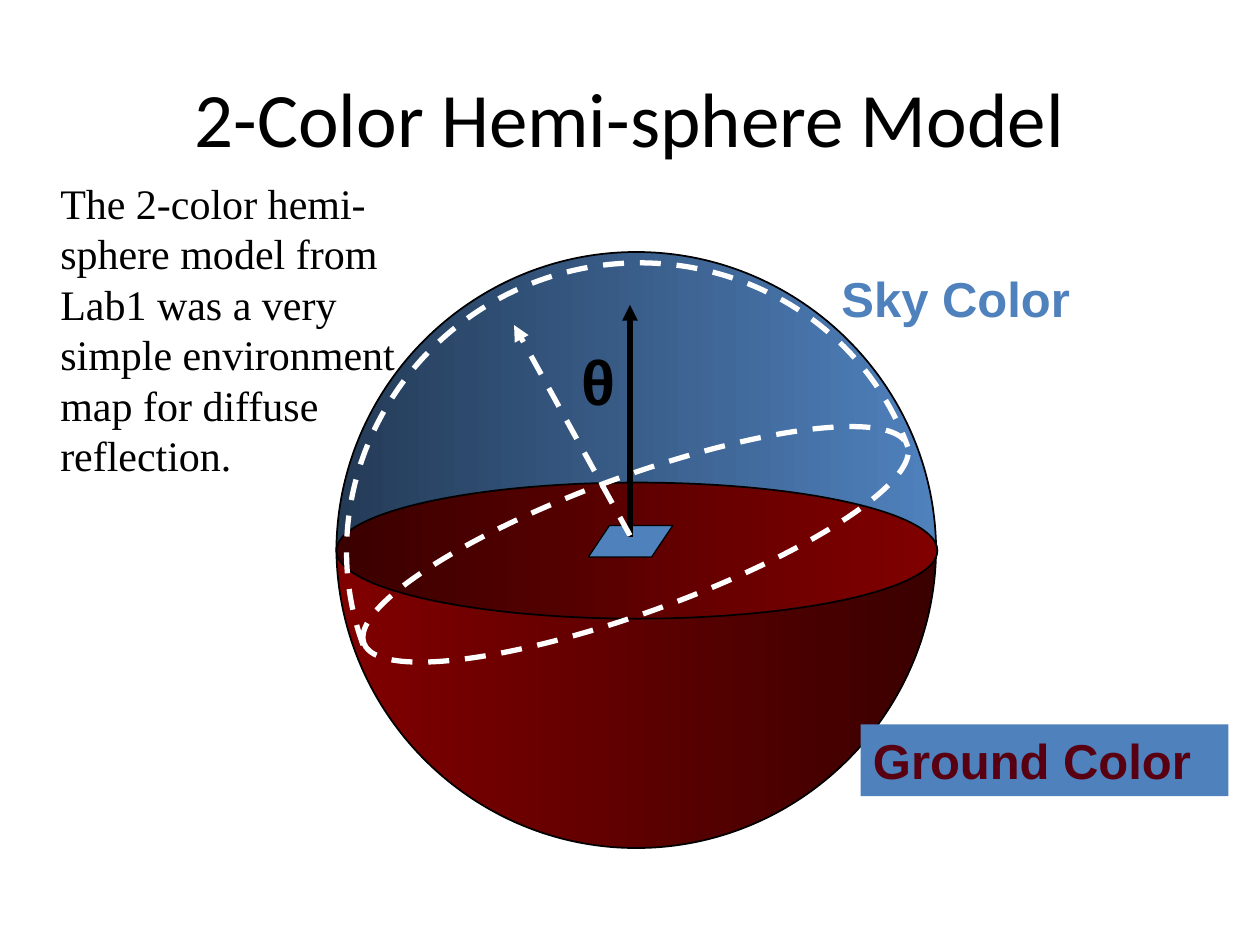
"""Build the slide on the two-colour hemisphere model."""
import pptx
import pptx.dml.color
import pptx.enum.dml
import pptx.enum.shapes
import pptx.enum.text
import pptx.oxml.ns
import pptx.util
from lxml import etree

Inches, Pt = pptx.util.Inches, pptx.util.Pt
KINDS = pptx.enum.shapes.MSO_SHAPE
ALIGN = pptx.enum.text.PP_ALIGN
ANCHOR = pptx.enum.text.MSO_ANCHOR
FIT = pptx.enum.text.MSO_AUTO_SIZE.SHAPE_TO_FIT_TEXT
DASH = pptx.enum.dml.MSO_LINE.DASH
qn = pptx.oxml.ns.qn

SKY, GROUND, BLACK, WHITE = "4F81BD", "800000", "000000", "FFFFFF"
SHADE = "46275"
BEND = 0.55
TITLE = ("2-Color Hemi-sphere Model", (0.5, 0.3, 9, 1.25))
NOTE = ("The 2-color hemi-sphere model from Lab1 was a very simple "
        "environment map for diffuse reflection.")
HEAD = dict(size=Pt(44), name="Calibri", bold=False)
LABEL = dict(size=Pt(28), name="Arial", bold=True)
THETA = dict(size=Pt(36), name="Arial", bold=True)
BODY = dict(size=Pt(24), name="Times New Roman", bold=False)
TEXTS = [
    ("θ", (4.5, 2.67, 0.5, 0.7), THETA, BLACK, ALIGN.CENTER),
    (NOTE, (0.38, 1.36, 2.99, 2.52), BODY, BLACK, ALIGN.LEFT),
]
ARROWS = [
    ((5, 4.26), (5, 2.42), BLACK, None),
    ((5, 4.25), (4.08, 2.58), WHITE, DASH),
]


def rgb(code):
    return pptx.dml.color.RGBColor.from_string(code)


def node(parent, tag, **attrs):
    return etree.SubElement(parent, qn(tag), attrs)


def ink(line, color, width, dash=None):
    line.color.rgb = rgb(color)
    for key, val in dict(width=Pt(width), dash_style=dash).items():
        setattr(line, key, val)


def blend(shape, color, dark):
    """Fill left to right, with the stop numbered dark shaded."""
    shape.fill.gradient()
    shape.fill.gradient_angle = 0
    for stop, place in zip(shape.fill.gradient_stops, (0, 1)):
        stop.color.rgb = rgb(color)
        stop.position = place
    tint = shape._element.spPr.findall(".//" + qn("a:gs"))[dark][0]
    node(tint, "a:gamma")
    node(tint, "a:shade", val=SHADE)
    node(tint, "a:invGamma")


def write(shape, text, fmt, color, align):
    frame = shape.text_frame
    frame.text = text
    para = frame.paragraphs[0]
    para.alignment = align
    font = para.runs[0].font
    for key, val in fmt.items():
        setattr(font, key, val)
    font.color.rgb = rgb(color)
    return frame


def label(shape, text, fmt, color, align):
    frame = write(shape, text, fmt, color, align)
    for key, val in dict(word_wrap=True, auto_size=FIT,
                         vertical_anchor=ANCHOR.TOP).items():
        setattr(frame, key, val)


def put(shapes, kind, box):
    shape = shapes.add_shape(kind, *map(Inches, box))
    shape.shadow.inherit = False
    return shape


def half(shapes, mid, radii, side):
    """Draw half an ellipse, above (-1) or below (1) its middle, as two curves."""
    units = [(-1, 0), (-1, BEND), (-BEND, 1), (0, 1), (BEND, 1), (1, BEND), (1, 0)]
    spots = [(Inches(mid[0] + radii[0] * across), Inches(mid[1] + side * radii[1] * up))
             for across, up in units]
    pen = shapes.build_freeform(*spots[0])
    pen.add_line_segments(spots[1:], close=False)
    shape = pen.convert_to_shape()
    shape.shadow.inherit = False
    track = shape._element.spPr.find(".//" + qn("a:path"))
    steps = track.findall(qn("a:lnTo"))
    for first in (0, 3):
        curve = node(track, "a:cubicBezTo")
        for step in steps[first:first + 3]:
            curve.append(step[0])
            track.remove(step)
    return shape


def arrow(shapes, start, end, color, dash):
    link = shapes.add_connector(pptx.enum.shapes.MSO_CONNECTOR.STRAIGHT,
                                *map(Inches, start + end))
    ink(link.line, color, 3, dash)
    node(link.line._get_or_add_ln(), "a:tailEnd", type="triangle")
    node(link._element.spPr, "a:effectLst")


def globe(shapes):
    sky = half(shapes, (5.05, 4.38), (2.38, 2.38), -1)
    ground = half(shapes, (5.05, 4.34), (2.38, 2.39), 1)
    disc = put(shapes, KINDS.OVAL, (2.67, 3.83, 4.77, 1.08))
    for shape, color, dark in ((sky, SKY, 0), (ground, GROUND, 1), (disc, GROUND, 0)):
        blend(shape, color, dark)
        ink(shape.line, BLACK, 1)
    ring = put(shapes, KINDS.OVAL, (2.75, 3.78, 4.59, 1.08))
    dome = half(shapes, (4.66, 4.4), (2.3, 2.24), -1)
    for shape in (ring, dome):
        shape.rotation = 340
        shape.fill.background()
        ink(shape.line, WHITE, 3, DASH)


def main():
    deck = pptx.Presentation()
    deck.slide_width, deck.slide_height = Inches(10), Inches(7.5)
    shapes = deck.slides.add_slide(deck.slide_layouts[5]).shapes
    title, (text, box) = shapes.title, TITLE
    for key, val in zip(("left", "top", "width", "height"), box):
        setattr(title, key, Inches(val))
    write(title, text, HEAD, BLACK, ALIGN.CENTER).vertical_anchor = ANCHOR.MIDDLE

    globe(shapes)
    name = shapes.add_textbox(*map(Inches, (6.58, 2.08, 2.92, 0.57)))
    label(name, "Sky Color", LABEL, SKY, ALIGN.LEFT)
    plate = put(shapes, KINDS.RECTANGLE, (6.83, 5.75, 2.92, 0.57))
    plate.line.fill.background()
    label(plate, "Ground Color", LABEL, "580011", ALIGN.LEFT)
    patch = put(shapes, KINDS.PARALLELOGRAM, (4.67, 4.17, 0.67, 0.25))
    patch.adjustments[0] = 0.67
    ink(patch.line, BLACK, 0.75)
    for shape in (plate, patch):
        shape.fill.solid()
        shape.fill.fore_color.rgb = rgb(SKY)

    for item in ARROWS:
        arrow(shapes, *item)
    for text, box, *style in TEXTS:
        label(shapes.add_textbox(*map(Inches, box)), text, *style)
    deck.save("out.pptx")


if __name__ == "__main__":
    main()
